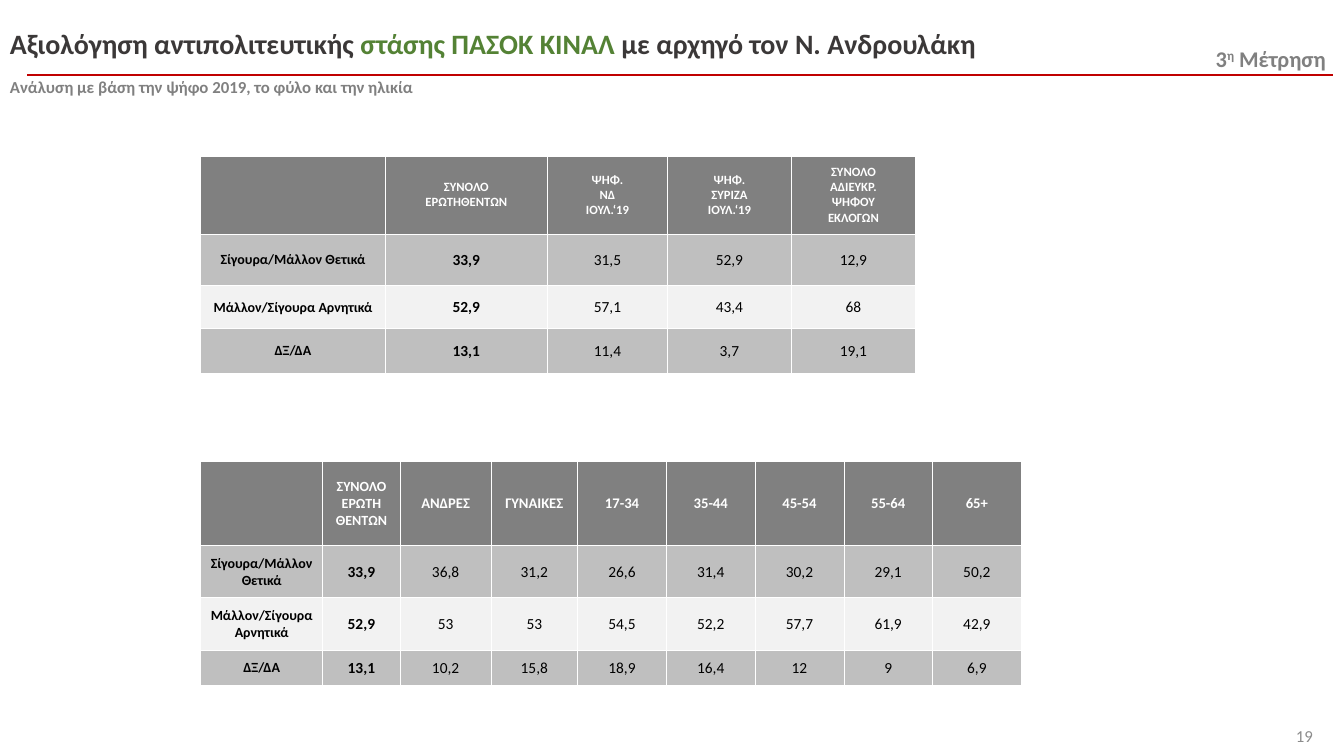
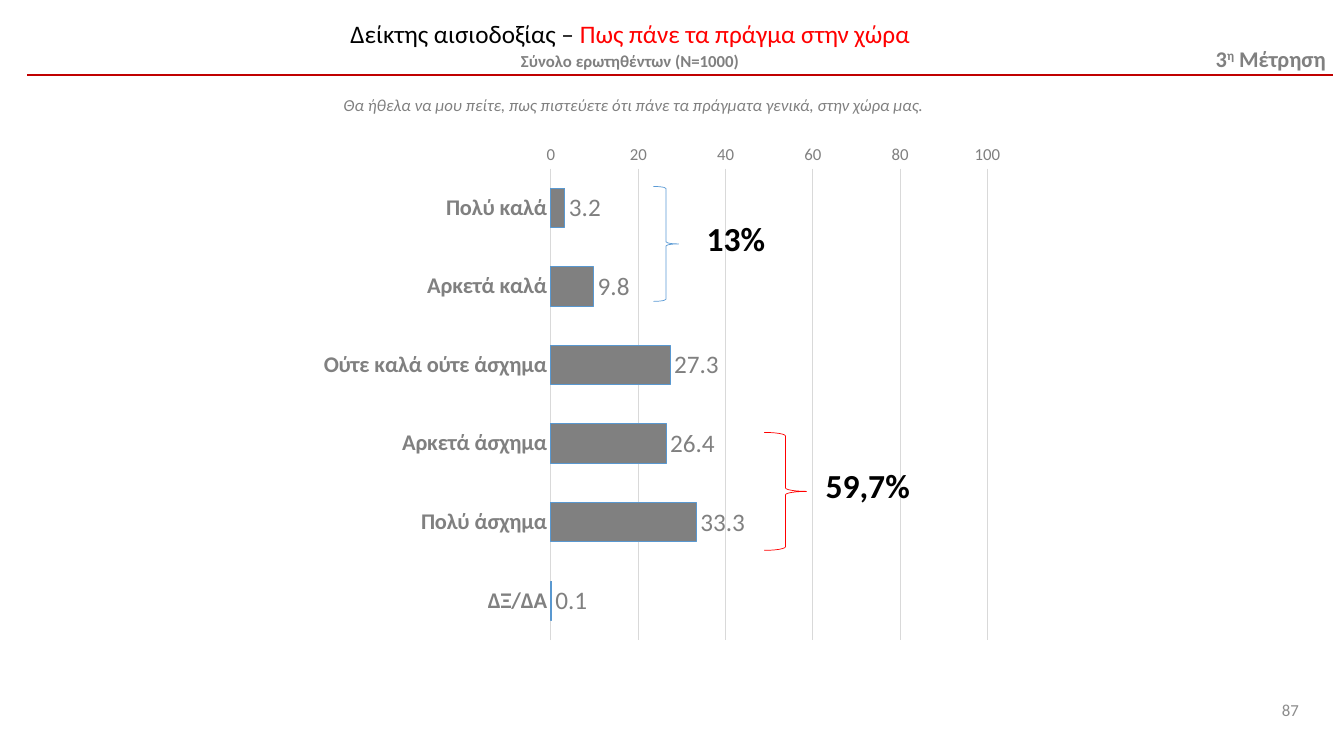
from lxml import etree
from pptx import Presentation
from pptx.chart.data import CategoryChartData
from pptx.dml.color import RGBColor
from pptx.enum.chart import XL_CHART_TYPE as CHART, XL_LABEL_POSITION as LABEL, XL_TICK_MARK as TICK
from pptx.enum.shapes import MSO_CONNECTOR as CONNECTOR, MSO_SHAPE as SHAPE
from pptx.enum.text import MSO_ANCHOR as ANCHOR, PP_ALIGN as ALIGN
from pptx.oxml import parse_xml
from pptx.oxml.ns import nsdecls, qn
from pptx.util import Inches, Pt

FONT = "Calibri"
WHITE, BLACK, GRAY, DARK = "FFFFFF", "000000", "808080", "3B3838"
BAND, PALE, GRID, PAGE = "BFBFBF", "F2F2F2", "D9D9D9", "8C8C8C"
RED, RULE, GREEN, BLUE, BAR_EDGE = "FF0000", "C00000", "548235", "5B9BD5", "5998D0"

WAVE = [[("3", {}), ("η", {"baseline": 30000}), (" Μέτρηση", {})]]
POSITIVE, NEGATIVE, NO_ANSWER = "Σίγουρα/Μάλλον Θετικά", "Μάλλον/Σίγουρα Αρνητικά", "ΔΞ/ΔΑ"

RATING_TITLE = [
    [("Αξιολόγηση αντιπολιτευτικής ", {}), ("στάσης ΠΑΣΟΚ ΚΙΝΑΛ ", {"color": GREEN}),
     ("με αρχηγό τον Ν. Ανδρουλάκη", {})],
    [("Ανάλυση με βάση την ψήφο 2019, το φύλο και την ηλικία", {"size": 12, "color": GRAY})],
]
BY_VOTE = {
    "top": 1.55, "head_sizes": (9, 9),
    "cols": [1.83, 1.61, 1.19, 1.23, 1.23], "rows": [0.77, 0.51, 0.43, 0.44],
    "cells": [
        ["", "ΣΥΝΟΛΟ\nΕΡΩΤΗΘΕΝΤΩΝ", "ΨΗΦ.\nΝΔ\nΙΟΥΛ.‘19", "ΨΗΦ.\nΣΥΡΙΖΑ\nΙΟΥΛ.‘19",
         "ΣΥΝΟΛΟ\nΑΔΙΕΥΚΡ.\nΨΗΦΟΥ\nΕΚΛΟΓΩΝ"],
        [POSITIVE, "33,9", "31,5", "52,9", "12,9"],
        [NEGATIVE, "52,9", "57,1", "43,4", "68"],
        [NO_ANSWER, "13,1", "11,4", "3,7", "19,1"],
    ],
}
BY_SEX_AND_AGE = {
    "top": 4.58, "head_sizes": (10, 10.5),
    "cols": [1.21, 0.77, 0.9, 0.86] + [0.88] * 5, "rows": [0.83, 0.52, 0.52, 0.35],
    "cells": [
        ["", "ΣΥΝΟΛΟ\nΕΡΩΤΗ\nΘΕΝΤΩΝ", "ΑΝΔΡΕΣ", "ΓΥΝΑΙΚΕΣ", "17-34", "35-44", "45-54", "55-64", "65+"],
        [POSITIVE, "33,9", "36,8", "31,2", "26,6", "31,4", "30,2", "29,1", "50,2"],
        [NEGATIVE, "52,9", "53", "53", "54,5", "52,2", "57,7", "61,9", "42,9"],
        [NO_ANSWER, "13,1", "10,2", "15,8", "18,9", "16,4", "12", "9", "6,9"],
    ],
}
OPTIMISM_TITLE = [
    [("Δείκτης αισιοδοξίας – ", {}), ("Πως πάνε τα πράγμα στην χώρα", {"color": RED})],
    [("Σύνολο ερωτηθέντων (N=1000)", {"size": 12, "color": GRAY, "bold": True})],
]
QUESTION = "Θα ήθελα να μου πείτε, πως πιστεύετε ότι πάνε τα πράγματα γενικά, στην χώρα μας."
OPTIMISM = {
    "Πολύ καλά": 3.2, "Αρκετά καλά": 9.8, "Ούτε καλά ούτε άσχημα": 27.3,
    "Αρκετά άσχημα": 26.4, "Πολύ άσχημα": 33.3, "ΔΞ/ΔΑ": 0.1,
}
PLOT_AREA = {"x": 0.5, "y": 0.075, "w": 0.436, "h": 0.873}
SUMS = [  # brace box, brace colour, sum, sum position
    ((6.48, 1.85, 0.25, 1.14), BLUE, "13%", (6.91, 2.11)),
    ((7.58, 4.29, 0.42, 1.17), RED, "59,7%", (8.09, 4.56)),
]


def rgb(value):
    return RGBColor.from_string(value)


def inches(values):
    return [Inches(v) for v in values]


def set_font(font, size, color, bold=False, italic=False):
    font.name, font.size, font.bold, font.italic = FONT, Pt(size), bold, italic
    font.color.rgb = rgb(color)


def set_line(line, color, width):
    line.color.rgb, line.width = rgb(color), Pt(width)


def write(tf, content, align=ALIGN.LEFT, gap=0, spacing=None, **fmt):
    """Fill a text frame with a string (one paragraph a line) or a list of run lists."""
    if isinstance(content, str):
        content = [[(line, {})] for line in content.split("\n")]
    for i, runs in enumerate(content):
        p = tf.add_paragraph() if i else tf.paragraphs[0]
        p.alignment = align
        if spacing:
            p.line_spacing = spacing
        if i and gap:
            p.space_before = Pt(gap)
        for text, changes in runs:
            style = {**fmt, **changes}
            baseline = style.pop("baseline", None)
            r = p.add_run()
            r.text = text
            set_font(r.font, **style)
            if baseline:
                r.font._element.set("baseline", str(baseline))


def add_text(slide, box, content, anchor=ANCHOR.TOP, **fmt):
    tf = slide.shapes.add_textbox(*inches(box)).text_frame
    tf.word_wrap, tf.vertical_anchor = True, anchor
    write(tf, content, **fmt)


def add_base(prs, page, page_at):
    """Add a slide with the rule, the wave label and the page number."""
    slide = prs.slides.add_slide(prs.slide_layouts[6])
    rule = slide.shapes.add_connector(CONNECTOR.STRAIGHT, *inches((0.27, 0.74, 13.22, 0.74)))
    set_line(rule.line, RULE, 1.5)
    etree.SubElement(rule._element.spPr, qn("a:effectLst"))
    add_text(slide, (11.96, 0.4, 1.37, 0.37), WAVE, size=16, color=GRAY, bold=True)
    add_text(slide, (*page_at, 0.64, 0.4), page, anchor=ANCHOR.MIDDLE, align=ALIGN.RIGHT,
             size=12, color=PAGE)
    return slide


def add_borders(cell):
    tc_pr = cell._tc.get_or_add_tcPr()
    for i, side in enumerate(("lnL", "lnR", "lnT", "lnB")):
        tc_pr.insert(i, parse_xml(
            f'<a:{side} {nsdecls("a")} w="{Pt(0.5)}"><a:solidFill>'
            f'<a:srgbClr val="{WHITE}"/></a:solidFill></a:{side}>'))


def cell_format(row, col, head_sizes):
    if row == 0:
        return {"size": head_sizes[col > 1], "color": WHITE, "bold": True}
    return {"size": 10 if col == 0 else 11, "color": BLACK, "bold": col < 2}


def add_results(slide, top, head_sizes, cols, rows, cells):
    box = inches((1.99, top, sum(cols), sum(rows)))
    table = slide.shapes.add_table(len(rows), len(cols), *box).table
    for col, width in zip(table.columns, cols):
        col.width = Inches(width)
    for row, height in zip(table.rows, rows):
        row.height = Inches(height)
    for i, texts in enumerate(cells):
        for j, text in enumerate(texts):
            cell = table.cell(i, j)
            cell.fill.solid()
            cell.fill.fore_color.rgb = rgb(GRAY if i == 0 else BAND if i % 2 else PALE)
            cell.vertical_anchor = ANCHOR.MIDDLE
            if i:
                cell.margin_left = cell.margin_right = cell.margin_top = Inches(0.01)
                cell.margin_bottom = 0
            add_borders(cell)
            write(cell.text_frame, text, align=ALIGN.CENTER, **cell_format(i, j, head_sizes))


def set_plot_area(chart):
    parts = {"layoutTarget": "inner", "xMode": "edge", "yMode": "edge", **PLOT_AREA}
    tags = "".join(f'<c:{name} val="{value}"/>' for name, value in parts.items())
    plot_area = chart._chartSpace.chart.plotArea
    for old in plot_area.findall(qn("c:layout")):
        plot_area.remove(old)
    plot_area.insert(0, parse_xml(
        f'<c:layout {nsdecls("c")}><c:manualLayout>{tags}</c:manualLayout></c:layout>'))


def add_bars(slide, box, values):
    data = CategoryChartData()
    data.categories = list(values)
    data.add_series("Series 1", list(values.values()))
    chart = slide.shapes.add_chart(CHART.BAR_CLUSTERED, *inches(box), data).chart
    chart.has_legend = chart.has_title = False
    set_font(chart.font, 10, BLACK)
    set_plot_area(chart)

    cat, val = chart.category_axis, chart.value_axis
    for axis in (cat, val):
        axis.major_tick_mark = axis.minor_tick_mark = TICK.NONE
    cat.reverse_order = True
    set_font(cat.tick_labels.font, 16, GRAY, bold=True)
    set_line(cat.format.line, GRID, 0.75)
    val.minimum_scale, val.maximum_scale, val.major_unit = 0, 100, 20
    set_font(val.tick_labels.font, 12, GRAY)
    val.format.line.fill.background()
    set_line(val.major_gridlines.format.line, GRID, 0.75)

    plot = chart.plots[0]
    plot.gap_width, plot.vary_by_categories = 100, False
    bars = plot.series[0]
    bars.format.fill.solid()
    bars.format.fill.fore_color.rgb = rgb(GRAY)
    set_line(bars.format.line, BAR_EDGE, 0.75)
    labels = bars.data_labels
    labels.show_value, labels.position = True, LABEL.OUTSIDE_END
    set_font(labels.font, 18, GRAY)


def add_brace(slide, box, color):
    brace = slide.shapes.add_shape(SHAPE.RIGHT_BRACE, *inches(box))
    brace.shadow.inherit = False
    brace.fill.background()
    set_line(brace.line, color, 0.5)


def rating_slide(prs):
    slide = add_base(prs, "19", (12.48, 7.1))
    add_text(slide, (0, 0.21, 13.33, 1.25), RATING_TITLE, gap=12, size=20, color=DARK, bold=True)
    for results in (BY_VOTE, BY_SEX_AND_AGE):
        add_results(slide, **results)


def optimism_slide(prs):
    slide = add_base(prs, "87", (12.34, 6.84))
    add_text(slide, (1.25, 0, 10, 0.85), OPTIMISM_TITLE, anchor=ANCHOR.MIDDLE,
             align=ALIGN.CENTER, spacing=1.1, size=18, color=BLACK)
    add_text(slide, (3.31, 0.89, 7.21, 0.5), QUESTION, size=12, color=GRAY, italic=True)
    add_bars(slide, (0.5, 1.27, 9.93, 5.36), OPTIMISM)
    for brace_box, color, total, total_at in SUMS:
        add_brace(slide, brace_box, color)
        add_text(slide, (*total_at, 1.14, 0.5), total, size=24, color=BLACK, bold=True)


def main():
    prs = Presentation()
    prs.slide_width, prs.slide_height = inches((13.33, 7.5))
    rating_slide(prs)
    optimism_slide(prs)
    prs.save("out.pptx")


if __name__ == "__main__":
    main()
